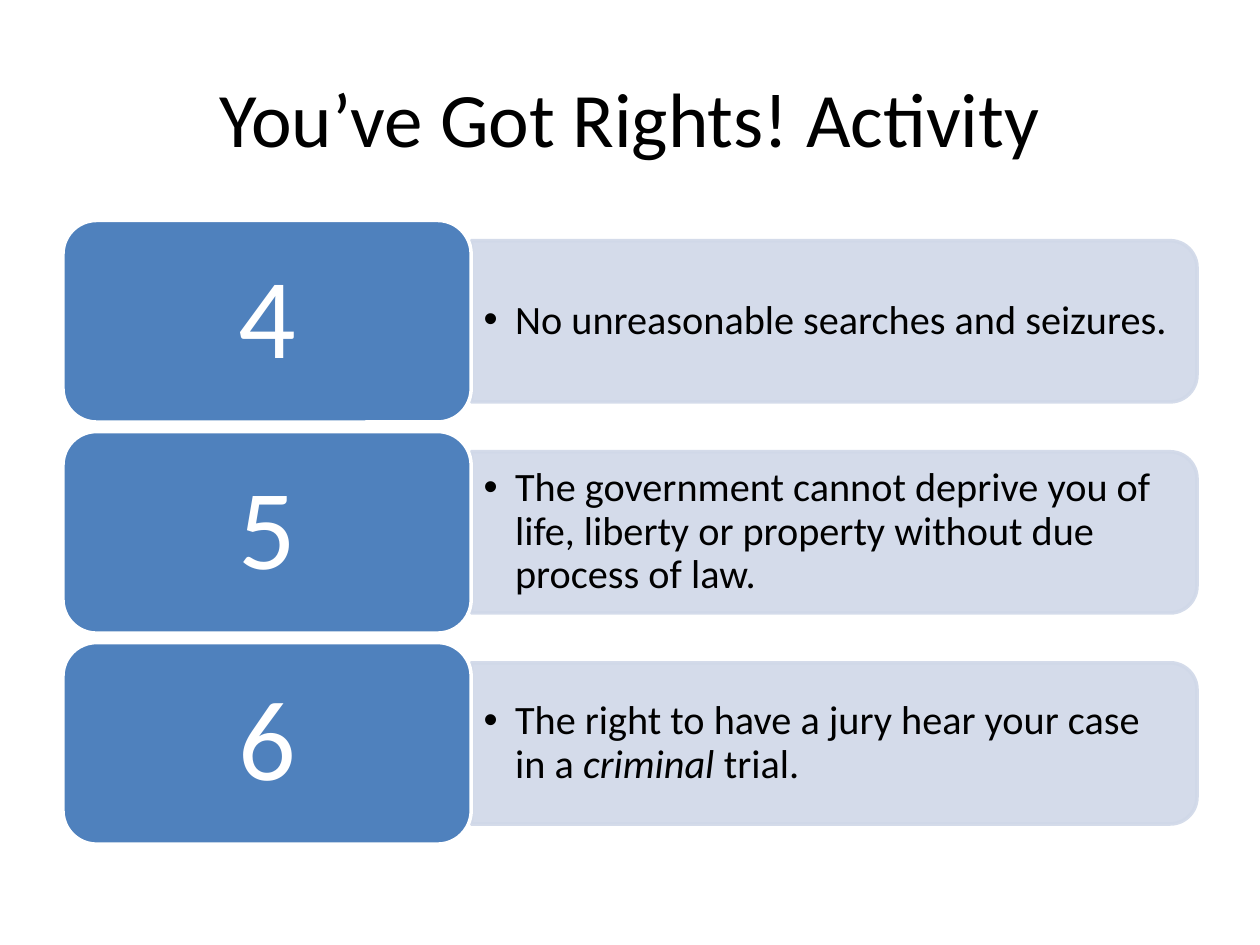
"""Build the slide on amendments four to six of the rights activity."""
from lxml import etree
from pptx import Presentation
from pptx import util as u
from pptx.dml.color import RGBColor
from pptx.enum import shapes, text
from pptx.oxml.ns import qn

COLORS = {"black": "000000", "white": "FFFFFF", "blue": "4F81BD", "pale": "D0D8E8"}
TITLE = "You’ve Got Rights! Activity"
RIGHTS = [
    ("4", [("No unreasonable searches and seizures.", False)]),
    ("5", [("The government cannot deprive you of life, liberty or property "
            "without due process of law.", False)]),
    ("6", [("The right to have a jury hear your case in a", False),
           (" criminal ", True), ("trial.", False)]),
]
LEFT, TOP, PITCH = 0.5, 1.75, 1.675
TILE_WIDTH, TILE_HEIGHT = 3.24, 1.6
PANEL_WIDTH, PANEL_HEIGHT = 5.76, 1.28


def write(frame, spans, size, color="black", align=text.PP_ALIGN.LEFT, spacing=None):
    """Fill a text frame with one formatted paragraph and return it."""
    frame.word_wrap = True
    frame.vertical_anchor = text.MSO_ANCHOR.MIDDLE
    para = frame.paragraphs[0]
    para.alignment = align
    para.line_spacing = spacing
    for words, italic in spans:
        span = para.add_run()
        span.text = words
        span.font.name = "Calibri"
        span.font.size = u.Pt(size)
        span.font.italic = italic
        span.font.color.rgb = RGBColor.from_string(COLORS[color])
    return para


class RightsSlide:
    """Hold the style and the current slide."""

    def __init__(self, deck):
        """Add a title-only slide to the deck."""
        self.page = deck.slides.add_slide(deck.slide_layouts[5])

    def title(self, words):
        """Place and format the title."""
        box = self.page.shapes.title
        box.left, box.top = u.Inches(0.5), u.Inches(0.3)
        box.width, box.height = u.Inches(9), u.Inches(1.25)
        write(box.text_frame, [(words, False)], 44, align=text.PP_ALIGN.CENTER)

    def shape(self, kind, left, top, width, height, fill, line):
        """Add a filled and outlined preset shape."""
        box = self.page.shapes.add_shape(
            kind, u.Inches(left), u.Inches(top), u.Inches(width), u.Inches(height))
        box.shadow.inherit = False
        box.fill.solid()
        box.fill.fore_color.rgb = RGBColor.from_string(COLORS[fill])
        box.line.color.rgb = RGBColor.from_string(COLORS[line])
        box.line.width = u.Pt(2)
        return box

    def panel(self, left, middle):
        """Add a translucent panel whose right corners are rounded."""
        box = self.shape(
            shapes.MSO_SHAPE.ROUND_2_SAME_RECTANGLE,
            left + (PANEL_WIDTH - PANEL_HEIGHT) / 2, middle - PANEL_WIDTH / 2,
            PANEL_HEIGHT, PANEL_WIDTH, "pale", "pale")
        box.rotation = 90
        for color in box._element.spPr.iter(qn("a:srgbClr")):
            etree.SubElement(color, qn("a:alpha"), val="90000")

    def bullet(self, left, middle, spans):
        """Add a bulleted text box centred on the panel."""
        box = self.page.shapes.add_textbox(
            u.Inches(left), u.Inches(middle - 0.575), u.Inches(5.7), u.Inches(1.15))
        para = write(box.text_frame, spans, 23, spacing=0.9)
        properties = para._p.get_or_add_pPr()
        properties.set("marL", str(u.Inches(0.25)))
        properties.set("indent", str(u.Inches(-0.25)))
        etree.SubElement(properties, qn("a:buFont"), typeface="Arial")
        etree.SubElement(properties, qn("a:buChar"), char="•")

    def tile(self, left, top, number):
        """Add a rounded tile that shows the amendment number."""
        box = self.shape(shapes.MSO_SHAPE.ROUNDED_RECTANGLE, left, top,
                         TILE_WIDTH, TILE_HEIGHT, "blue", "white")
        write(box.text_frame, [(number, False)], 65, "white",
              text.PP_ALIGN.CENTER, 0.9)


def main():
    """Build and save the deck."""
    deck = Presentation()
    deck.slide_width, deck.slide_height = u.Inches(10), u.Inches(7.5)
    slide = RightsSlide(deck)
    slide.title(TITLE)
    for row, (number, spans) in enumerate(RIGHTS):
        top = TOP + row * PITCH
        middle = top + TILE_HEIGHT / 2
        slide.panel(LEFT + TILE_WIDTH, middle)
        slide.bullet(LEFT + TILE_WIDTH, middle, spans)
        slide.tile(LEFT, top, number)
    deck.save("out.pptx")


if __name__ == "__main__":
    main()
